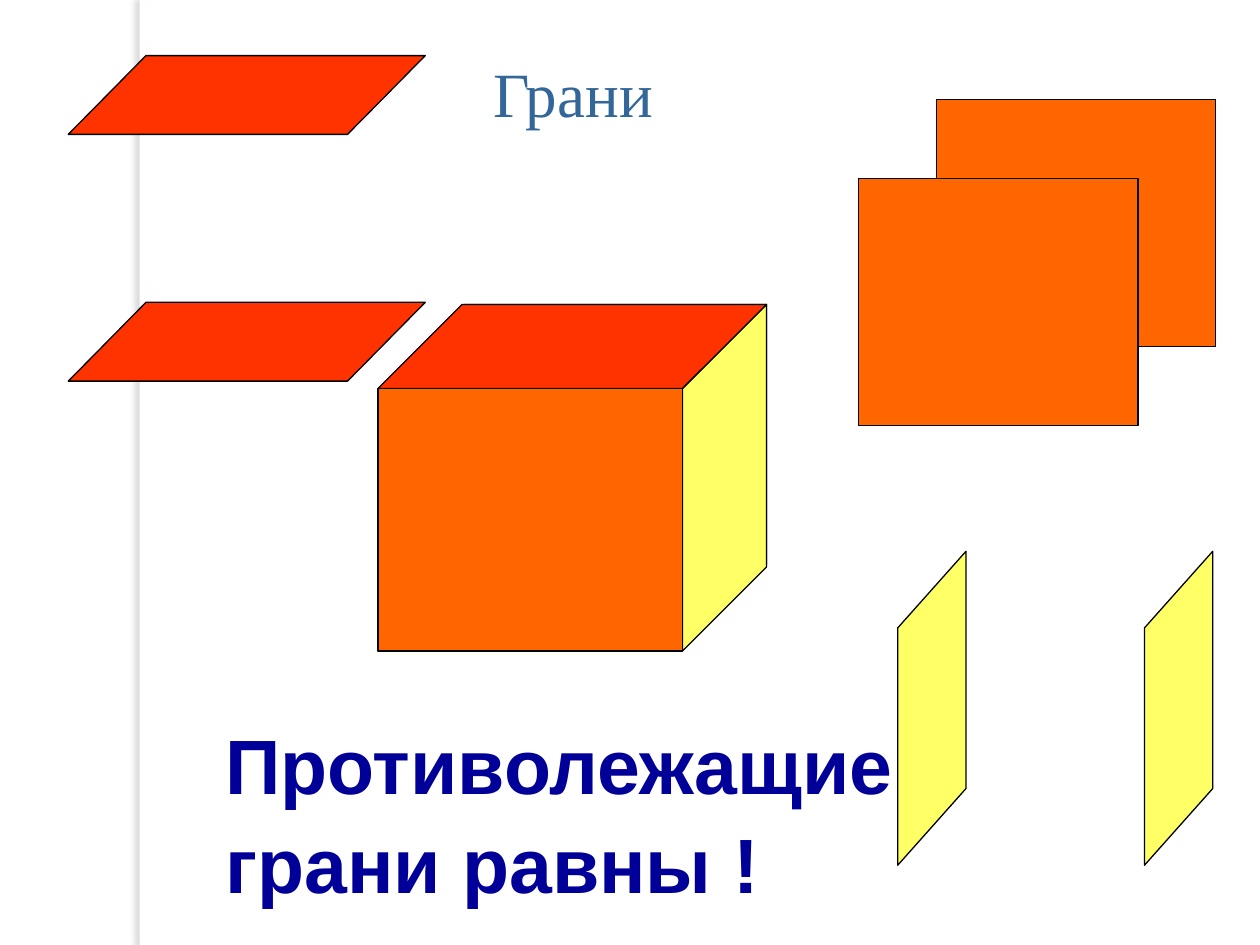
import pptx
import pptx.util
import pptx.dml.color
import pptx.enum.shapes
import pptx.enum.text
from lxml import etree

COLUMNS, ROWS = 120, 90
TITLE = "Грани"
RULE = ["Противолежащие", "грани равны !"]
FACE_COLOURS = {"side": "FFFF66", "top": "FF3300", "front": "FF6600"}

CUBE = (36, 29)
CUBE_SIZE = (29, 25, 8, 8)
PAIR_SIZE = (26.6, 23.5, 7.4, 7.5)
SIDE_SIZE = (0, 22.6, 6.5, 7.3)
PAIRS = [
    ("front", PAIR_SIZE, [(89.2, 9.5), (81.8, 17)]),
    ("top", PAIR_SIZE, [(6.5, 28.8), (6.5, 5.3)]),
    ("side", SIDE_SIZE, [(85.5, 52.5), (109, 52.5)]),
]

deck = pptx.Presentation()
deck.slide_width = pptx.util.Inches(10)
deck.slide_height = pptx.util.Inches(7.5)
page = deck.slides.add_slide(deck.slide_layouts[5])
CELL = deck.slide_width / COLUMNS


def grid(*cells):
    return [round(cell * CELL) for cell in cells]


def colour(text):
    return pptx.dml.color.RGBColor.from_string(text)


def paint(shape, fill, outlined=True):
    shape.shadow.inherit = False
    shape.fill.solid()
    shape.fill.fore_color.rgb = colour(fill)
    if outlined:
        shape.line.color.rgb = colour("000000")
        shape.line.width = pptx.util.Pt(0.75)
    else:
        shape.line.fill.background()


def outline(kind, size):
    width, height, across, down = size
    return {
        "front": [(0, 0), (width, 0), (width, height), (0, height)],
        "top": [(across, 0), (across + width, 0), (width, down), (0, down)],
        "side": [(0, down), (0, down + height), (across, height), (across, 0)],
    }[kind]


def add_face(shapes, kind, size, left, top):
    points = [grid(left + x, top + y) for x, y in outline(kind, size)]
    builder = shapes.build_freeform(*points[0], scale=1.0)
    builder.add_line_segments(points[1:], close=True)
    paint(builder.convert_to_shape(), FACE_COLOURS[kind])


def format_text(box, font, size, text_colour, bold):
    for para in box.text_frame.paragraphs:
        para.alignment = pptx.enum.text.PP_ALIGN.LEFT
        for span in para.runs:
            span.font.name = font
            span.font.size = pptx.util.Pt(size)
            span.font.bold = bold
            span.font.color.rgb = colour(text_colour)


def add_strip():
    strip = page.shapes.add_shape(
        pptx.enum.shapes.MSO_SHAPE.RECTANGLE, *grid(13.3, 0, 1, ROWS))
    paint(strip, "FFFFFF", outlined=False)
    effects = strip.fill._xPr.find(pptx.oxml.ns.qn("a:effectLst"))
    shadow = etree.SubElement(
        effects, pptx.oxml.ns.qn("a:outerShdw"), blurRad="38100",
        dist="38100", dir="10800000", algn="r", rotWithShape="0")
    tint = etree.SubElement(shadow, pptx.oxml.ns.qn("a:srgbClr"), val="7A7276")
    etree.SubElement(tint, pptx.oxml.ns.qn("a:alpha"), val="25000")


def add_cube():
    left, top = CUBE
    width, height, across, down = CUBE_SIZE
    cube = page.shapes.add_shape(
        pptx.enum.shapes.MSO_SHAPE.CUBE,
        *grid(left, top, width + across, height + down))
    cube.adjustments[0] = 0.25
    paint(cube, "005D9C")
    add_face(page.shapes, "side", CUBE_SIZE, left + width, top)
    add_face(page.shapes, "top", CUBE_SIZE, left, top)
    add_face(page.shapes, "front", CUBE_SIZE, left, top + down)


def add_texts():
    title = page.shapes.title
    title.left, title.top, title.width, title.height = grid(45.8, 4.3, 34, 9)
    title.text_frame.text = TITLE
    title.text_frame.vertical_anchor = pptx.enum.text.MSO_ANCHOR.MIDDLE
    format_text(title, "Times New Roman", 36, "336699", False)

    box = page.shapes.add_textbox(*grid(20.3, 67.7, 67, 18.8))
    box.text_frame.word_wrap = True
    box.text_frame.text = "\n".join(RULE)
    second = box.text_frame.paragraphs[1]
    second.line_spacing = 0.5
    second.space_before = pptx.util.Pt(27)
    format_text(box, "Arial", 44, "000099", True)


add_strip()
add_cube()
for kind, size, places in PAIRS:
    group = page.shapes.add_group_shape()
    for place in places:
        add_face(group.shapes, kind, size, *place)
add_texts()
deck.save("out.pptx")
